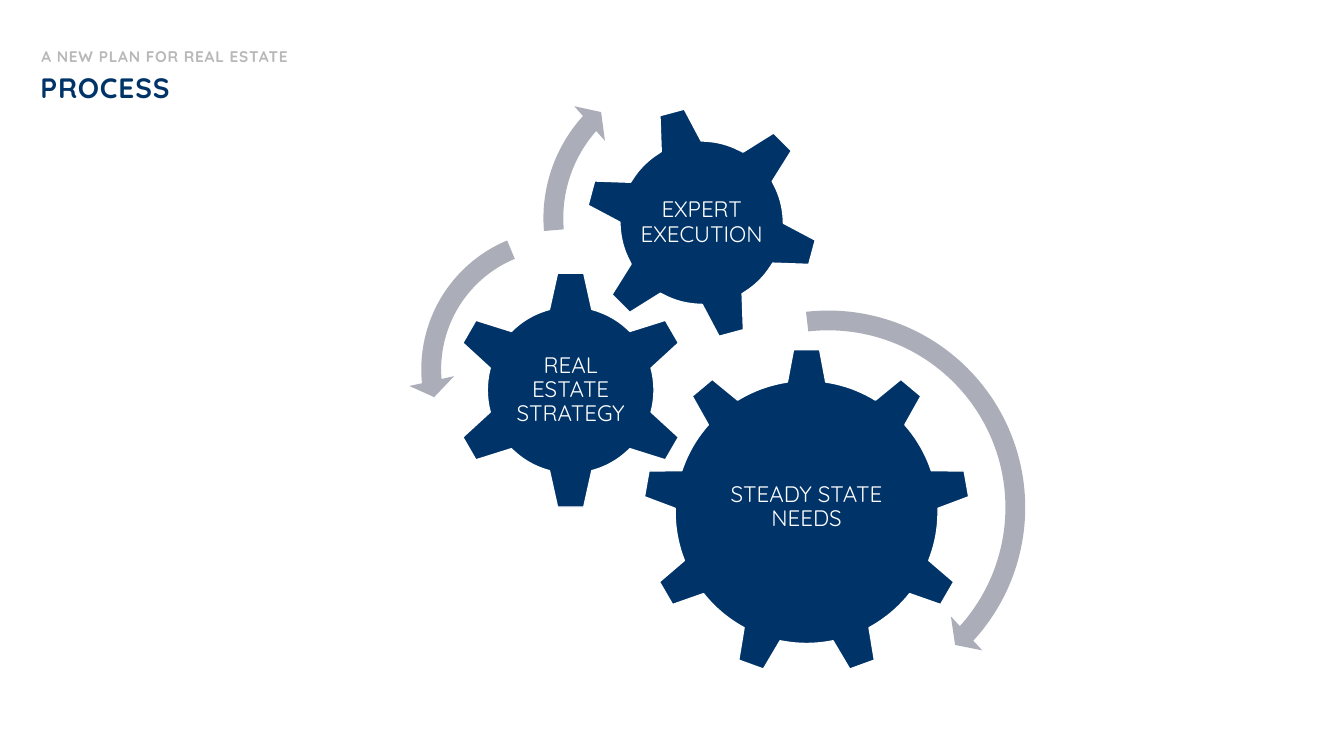
from collections import namedtuple
from math import asin, cos, pi, radians, sin

from pptx import Presentation, util as u
from pptx.dml.color import RGBColor
from pptx.enum import shapes, text

NAVY = RGBColor(0x00, 0x34, 0x68)
GRAY = RGBColor(0xB8, 0xB8, 0xB8)
SILVER = RGBColor(0xAB, 0xAE, 0xB9)
WHITE = RGBColor(0xFF, 0xFF, 0xFF)
COLUMNS, ROWS = 1333, 750
CELL = u.Inches(0.01)
ARC_STEPS = 10

Box = namedtuple("Box", "left top width height")
Gear = namedtuple("Gear", "label x y teeth turn body root root_half tip tip_half text_width lift")
Arrow = namedtuple("Arrow", "kind x y size thickness head_angle end start head_width")

HEADING = Box(40, 49, 1100, 55)
PROCESS = Box(405, 53, 625, 659)
GEARS = [
    Gear("STEADY STATE NEEDS", 395, 455, 9, 0, 130.4, 129, 19, 161, 13, 190, 5),
    Gear("REAL ESTATE STRATEGY", 161, 334, 6, 0, 82.7, 80, 21, 116, 13, 113, 0),
    Gear("EXPERT EXECUTION", 291, 168, 6, -15, 81, 78.5, 20.5, 113.3, 12.5, 126, 0),
]
RIGHT, LEFT = shapes.MSO_SHAPE.CIRCULAR_ARROW, shapes.MSO_SHAPE.LEFT_CIRCULAR_ARROW
ARROWS = [
    Arrow(RIGHT, 208, 242, 417, 4.7, 4.98, 42.32, 263.54, 5.5),
    Arrow(LEFT, 0, 162, 303, 6.5, 7.17, 174.82, 247.3, 7.5),
    Arrow(RIGHT, 121, 0, 327, 6, 6.57, 221.9, 175.14, 7),
]


def apply(target, values):
    for name, value in values.items():
        setattr(target, name, value)


def write(shape, words, size, color, bold=None, spacing=None, paragraph_values=None):
    paragraph = shape.text_frame.paragraphs[0]
    apply(paragraph, {"line_spacing": 0.9, **(paragraph_values or {})})
    run = paragraph.add_run()
    run.text = words
    apply(run.font, {"name": "Quicksand", "size": u.Pt(size), "bold": bold})
    run.font.color.rgb = color
    if spacing:
        run.font._element.set("spc", str(spacing))


def place_heading(slide, box):
    title, eyebrow = slide.shapes.title, slide.placeholders[1]
    rows = [
        (eyebrow, 1, 0, 700, 17, text.MSO_ANCHOR.TOP),
        (title, 0, 25, box.width, 30, text.MSO_ANCHOR.MIDDLE),
    ]
    for shape, x, y, width, height, anchor in rows:
        apply(shape, {"left": (box.left + x) * CELL, "top": (box.top + y) * CELL,
                      "width": width * CELL, "height": height * CELL})
        apply(shape.text_frame, {
            "margin_left": 0, "margin_right": 0, "margin_top": 0, "margin_bottom": 0,
            "word_wrap": True, "vertical_anchor": anchor,
            "auto_size": text.MSO_AUTO_SIZE.SHAPE_TO_FIT_TEXT,
        })
    write(eyebrow, "A NEW PLAN FOR REAL ESTATE", 11, GRAY, True, 50,
          {"space_before": u.Pt(10)})
    write(title, "PROCESS", 20, NAVY, True, 60)


def gear_outline(gear):
    points = []
    pitch = 2 * pi / gear.teeth
    root_angle = asin(gear.root_half / gear.body)
    for tooth in range(gear.teeth):
        angle = radians(gear.turn) + tooth * pitch
        for across, out in [(-gear.root_half, gear.root), (-gear.tip_half, gear.tip),
                            (gear.tip_half, gear.tip), (gear.root_half, gear.root)]:
            points.append((across * cos(angle) + out * sin(angle),
                           across * sin(angle) - out * cos(angle)))
        for step in range(1, ARC_STEPS):
            sweep = angle + root_angle + (pitch - 2 * root_angle) * step / ARC_STEPS
            points.append((gear.body * sin(sweep), -gear.body * cos(sweep)))
    return points


def place_gear(slide, box, gear):
    points = [(round((box.left + gear.x + x) * CELL), round((box.top + gear.y + y) * CELL))
              for x, y in gear_outline(gear)]
    builder = slide.shapes.build_freeform(*points[0])
    builder.add_line_segments(points[1:], close=True)
    shape = builder.convert_to_shape()
    shape.shadow.inherit = False
    shape.fill.solid()
    shape.fill.fore_color.rgb = NAVY
    shape.line.color.rgb = WHITE
    shape.line.width = u.Pt(1)
    side = (shape.width - gear.text_width * CELL) // 2
    inset = shape.height // 4
    apply(shape.text_frame, {
        "margin_left": side, "margin_right": side,
        "margin_top": inset, "margin_bottom": inset + gear.lift * CELL,
        "word_wrap": True, "vertical_anchor": text.MSO_ANCHOR.MIDDLE,
    })
    write(shape, gear.label, 16, WHITE, paragraph_values={"alignment": text.PP_ALIGN.CENTER})


def place_arrow(slide, box, arrow):
    shape = slide.shapes.add_shape(
        arrow.kind, (box.left + arrow.x) * CELL, (box.top + arrow.y) * CELL,
        arrow.size * CELL, arrow.size * CELL)
    degrees = [angle * 0.6 for angle in (arrow.head_angle, arrow.end, arrow.start)]
    values = [arrow.thickness / 100, *degrees, arrow.head_width / 100]
    for index, value in enumerate(values):
        shape.adjustments[index] = value
    shape.shadow.inherit = False
    shape.fill.solid()
    shape.fill.fore_color.rgb = SILVER
    shape.line.fill.background()


def place_process(slide, box):
    for gear in GEARS:
        place_gear(slide, box, gear)
    for arrow in ARROWS:
        place_arrow(slide, box, arrow)


def main():
    presentation = Presentation()
    presentation.slide_width = COLUMNS * CELL
    presentation.slide_height = ROWS * CELL
    slide = presentation.slides.add_slide(presentation.slide_layouts[2])
    place_heading(slide, HEADING)
    place_process(slide, PROCESS)
    presentation.save("out.pptx")


if __name__ == "__main__":
    main()
